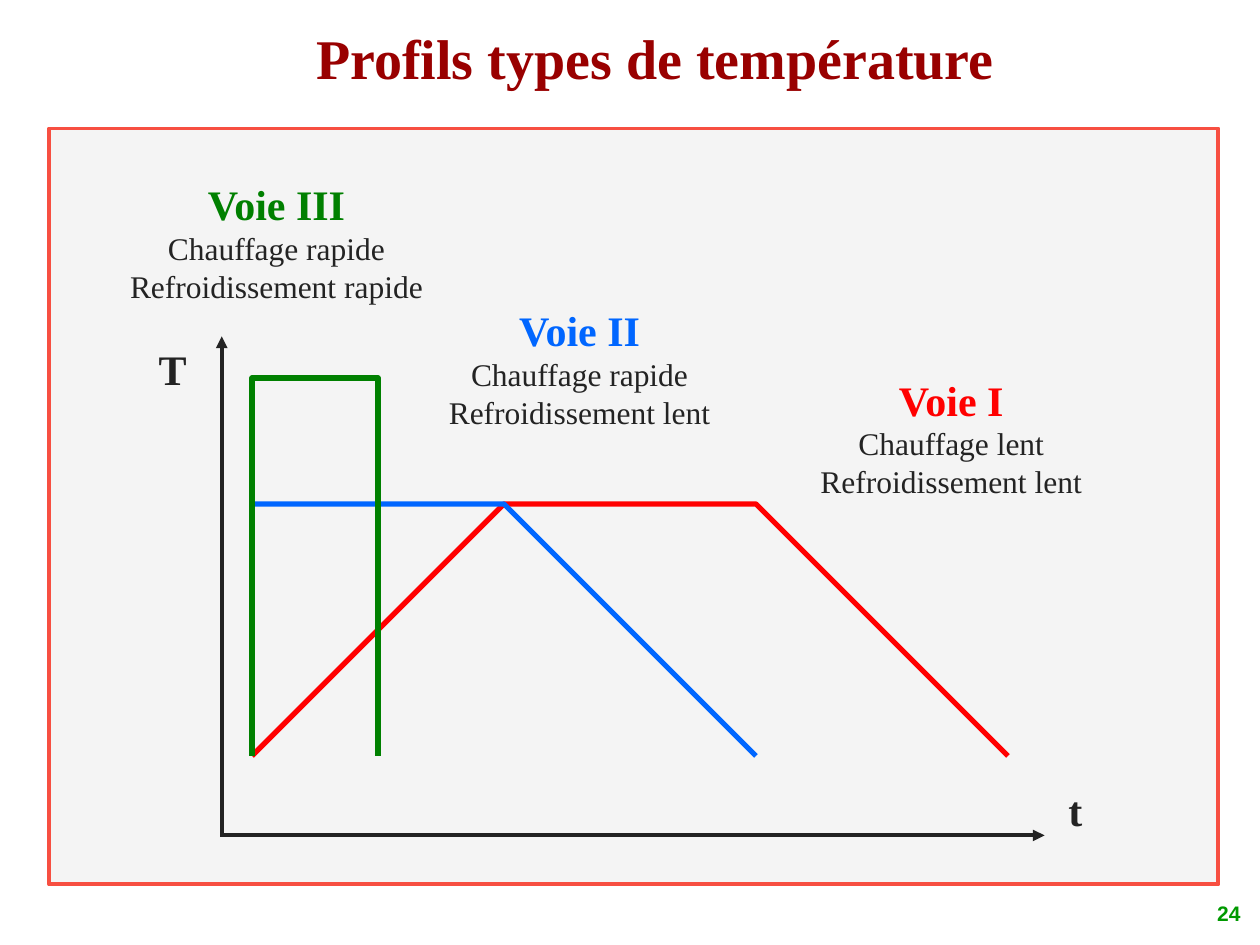
from dataclasses import dataclass

from lxml import etree
from pptx import Presentation
from pptx.dml.color import RGBColor
from pptx.enum.shapes import MSO_CONNECTOR, MSO_SHAPE
from pptx.enum.text import MSO_ANCHOR, MSO_AUTO_SIZE, PP_ALIGN
from pptx.oxml.ns import qn
from pptx.util import Inches, Pt

RECT, OVAL = MSO_SHAPE.RECTANGLE, MSO_SHAPE.OVAL
STRAIGHT = MSO_CONNECTOR.STRAIGHT
TOP, MIDDLE = MSO_ANCHOR.TOP, MSO_ANCHOR.MIDDLE
LEFT, CENTER = PP_ALIGN.LEFT, PP_ALIGN.CENTER
NO_FIT = MSO_AUTO_SIZE.NONE


@dataclass(frozen=True)
class Theme:
    serif: str = "Times New Roman"
    sans: str = "Arial"
    ink: str = "232323"
    title: str = "990000"
    panel: str = "F4F4F4"
    frame: str = "F74F41"
    page: str = "009900"
    white: str = "FFFFFF"
    red: str = "FF0000"
    blue: str = "0066FF"
    green: str = "008000"
    title_pt: int = 32
    head_pt: int = 24
    body_pt: int = 18
    page_pt: int = 12
    thin: float = 2.25
    thick: float = 3


THEME = Theme()

ROUTES = [
    ("Voie I", "Chauffage lent", "Refroidissement lent", THEME.red,
     (6.41, 2.92, 2.28, 1.1),
     [(1.77, 6.02), (4.11, 3.86), (6.02, 3.86), (8.09, 6.11)]),
    ("Voie II", "Chauffage rapide", "Refroidissement lent", THEME.blue,
     (3.46, 2.37, 2.28, 1.1),
     [(1.76, 6), (2.14, 3.5), (3.73, 3.5), (5.53, 6.15)]),
    ("Voie III", "Chauffage rapide", "Refroidissement rapide", THEME.green,
     (0.93, 1.37, 2.53, 1.1),
     [(1.75, 5.99), (2.31, 2.77), (2.64, 2.77), (3.03, 6.06)]),
]


def rgb(code):
    return RGBColor.from_string(code)


def place(box):
    return [Inches(v) for v in box]


def write(shape, lines, align=LEFT, anchor=TOP, font=THEME.serif):
    frame = shape.text_frame
    frame.word_wrap = False
    frame.auto_size = NO_FIT
    frame.vertical_anchor = anchor
    frame.text = "\n".join(text for text, *_ in lines)
    for para, (_, size, color, bold) in zip(frame.paragraphs, lines):
        para.alignment = align
        para.font.name = font
        para.font.size = Pt(size)
        para.font.bold = bold
        para.font.color.rgb = rgb(color)


def add_label(slide, box, lines, align=LEFT):
    write(slide.shapes.add_textbox(*place(box)), lines, align)


def add_title(slide, text, box):
    title = slide.shapes.title
    title.left, title.top, title.width, title.height = place(box)
    write(title, [(text, THEME.title_pt, THEME.title, True)])


def add_block(slide, kind, box, fill, edge=None):
    shape = slide.shapes.add_shape(kind, *place(box))
    shape.shadow.inherit = False
    shape.fill.solid()
    shape.fill.fore_color.rgb = rgb(fill)
    if edge:
        shape.line.color.rgb = rgb(edge)
        shape.line.width = Pt(THEME.thin)
    else:
        shape.line.fill.background()
    return shape


def add_axis(slide, start, end):
    axis = slide.shapes.add_connector(STRAIGHT, *place(start + end))
    axis.line.color.rgb = rgb(THEME.ink)
    axis.line.width = Pt(THEME.thin)
    etree.SubElement(axis.line._get_or_add_ln(), qn("a:tailEnd"), type="triangle")
    etree.SubElement(axis._element.spPr, qn("a:effectLst"))


def add_curve(slide, points, color):
    path = slide.shapes.build_freeform(*points[0], scale=Inches(1))
    path.add_line_segments(points[1:], close=False)
    curve = path.convert_to_shape()
    curve.shadow.inherit = False
    curve.fill.background()
    curve.line.color.rgb = rgb(color)
    curve.line.width = Pt(THEME.thick)


def main():
    deck = Presentation()
    deck.slide_width, deck.slide_height = Inches(10), Inches(7.5)
    slide = deck.slides.add_slide(deck.slide_layouts[5])

    page = add_block(slide, OVAL, (9.5, 7.08, 0.42, 0.33), THEME.white)
    write(page, [("24", THEME.page_pt, THEME.page, True)],
          anchor=MIDDLE, font=THEME.sans)
    add_block(slide, RECT, (0.39, 1.02, 9.28, 6), THEME.panel, THEME.frame)
    add_title(slide, "Profils types de température", (2.41, 0.14, 5.6, 0.63))

    add_axis(slide, (1.76, 6.64), (1.76, 2.67))
    add_axis(slide, (1.78, 6.63), (8.29, 6.63))
    add_label(slide, (1.16, 2.68, 0.42, 0.5),
              [("T", THEME.head_pt, THEME.ink, True)], CENTER)
    add_label(slide, (8.38, 6.18, 0.31, 0.5),
              [("t", THEME.head_pt, THEME.ink, True)])

    for name, heat, cool, color, box, points in ROUTES:
        add_curve(slide, points, color)
        add_label(slide, box, [
            (name, THEME.head_pt, color, True),
            (heat, THEME.body_pt, THEME.ink, False),
            (cool, THEME.body_pt, THEME.ink, False),
        ], CENTER)

    deck.save("out.pptx")


if __name__ == "__main__":
    main()
